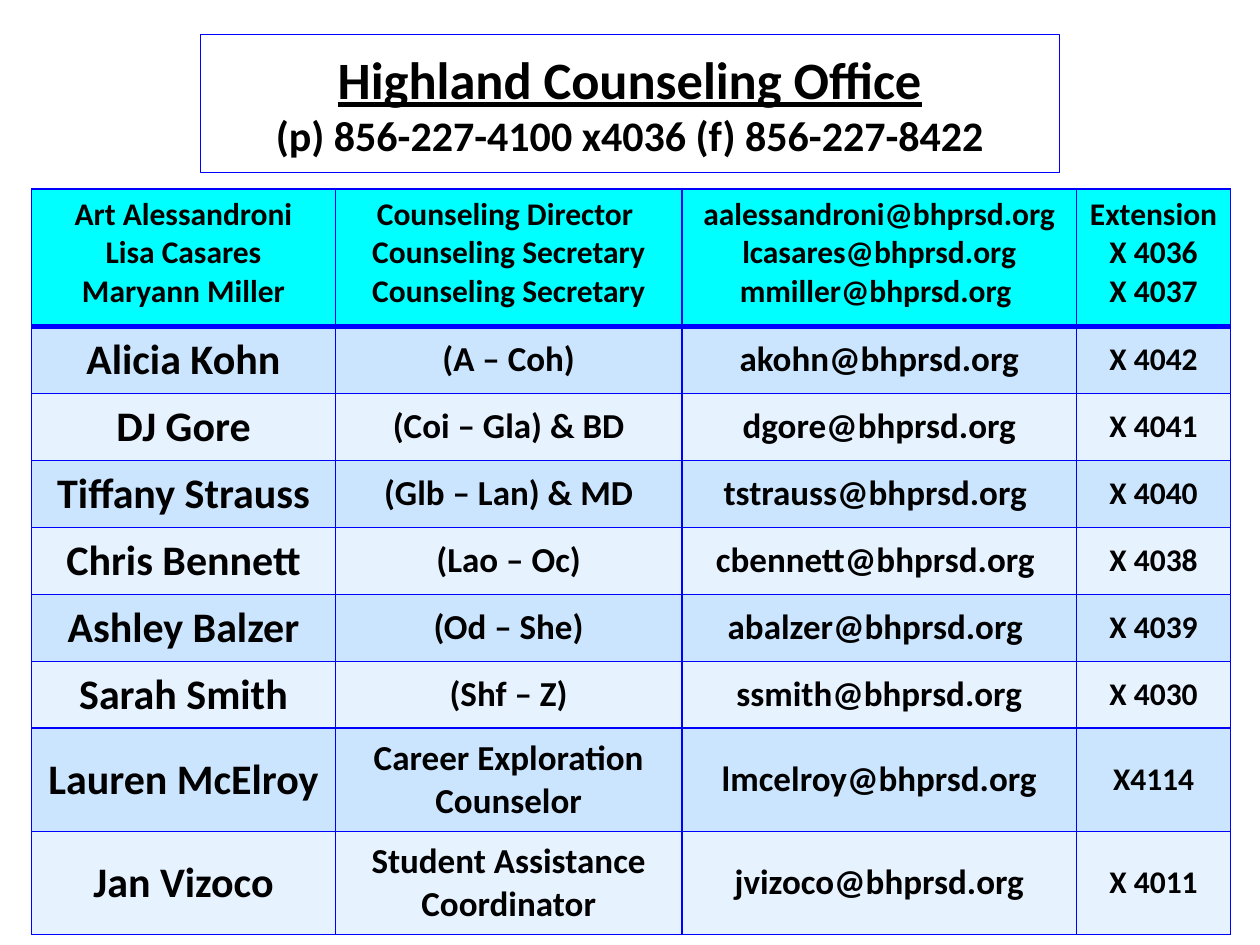
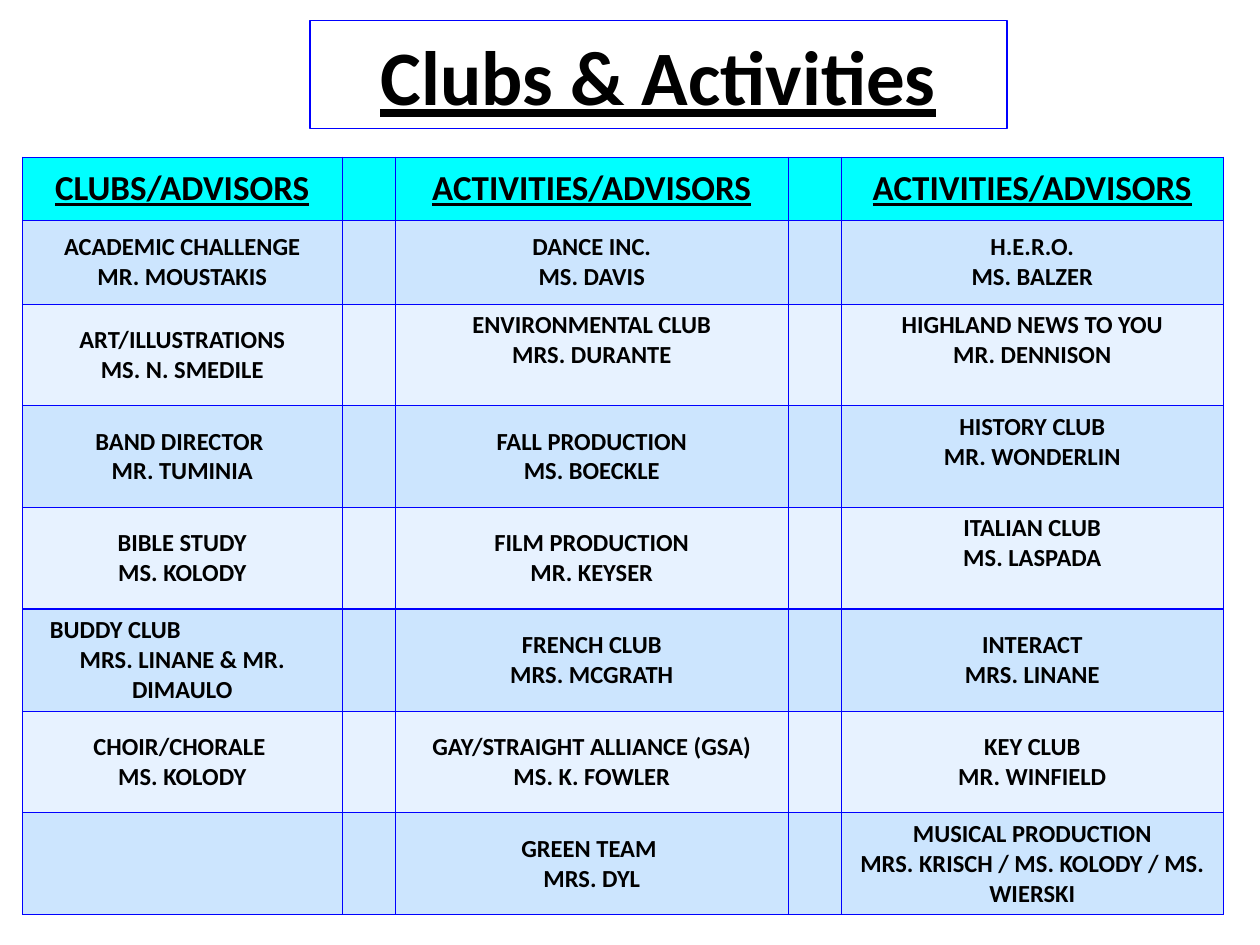
from lxml.etree import SubElement
from pptx import Presentation
from pptx.dml.color import RGBColor
from pptx.enum.shapes import MSO_SHAPE
from pptx.enum.text import MSO_ANCHOR, PP_ALIGN
from pptx.oxml.ns import qn
from pptx.util import Cm, Pt

FONT = "Calibri"
INK = "000000"
RULE = "0000FF"
HEADER = "00FFFF"
BANDS = ("CCE5FE", "E7F2FF")

STAFF_HEADER = [
    "Art Alessandroni\nLisa Casares\nMaryann Miller",
    "Counseling Director \nCounseling Secretary\nCounseling Secretary",
    "aalessandroni@bhprsd.org\nlcasares@bhprsd.org\nmmiller@bhprsd.org ",
    "Extension\nX 4036\nX 4037",
]
COUNSELORS = [
    ("Alicia Kohn", "(A – Coh)", "akohn@bhprsd.org", "X 4042"),
    ("DJ Gore", "(Coi – Gla) & BD", "dgore@bhprsd.org", "X 4041"),
    ("Tiffany Strauss", "(Glb – Lan) & MD", "tstrauss@bhprsd.org ", "X 4040"),
    ("Chris Bennett", "(Lao – Oc)", "cbennett@bhprsd.org ", "X 4038"),
    ("Ashley Balzer", "(Od – She)", "abalzer@bhprsd.org ", "X 4039"),
    ("Sarah Smith", "(Shf – Z)", "ssmith@bhprsd.org", "X 4030"),
    ("Lauren McElroy", "Career Exploration Counselor", "lmcelroy@bhprsd.org", "X4114"),
    ("Jan Vizoco", "Student Assistance Coordinator", "jvizoco@bhprsd.org", "X 4011"),
]
CLUB_HEADER = ["CLUBS/ADVISORS", "", "ACTIVITIES/ADVISORS", "", "ACTIVITIES/ADVISORS"]
CLUBS = [
    ("ACADEMIC CHALLENGE\nMR. MOUSTAKIS", "DANCE INC.\nMS. DAVIS", "H.E.R.O.\nMS. BALZER"),
    ("ART/ILLUSTRATIONS\nMS. N. SMEDILE", "ENVIRONMENTAL CLUB\nMRS. DURANTE",
     "HIGHLAND NEWS TO YOU\nMR. DENNISON"),
    ("BAND DIRECTOR \nMR. TUMINIA", "FALL PRODUCTION\nMS. BOECKLE",
     "HISTORY CLUB\nMR. WONDERLIN"),
    ("BIBLE STUDY\nMS. KOLODY", "FILM PRODUCTION\nMR. KEYSER", "ITALIAN CLUB\nMS. LASPADA"),
    ("BUDDY CLUB\nMRS. LINANE & MR. DIMAULO", "FRENCH CLUB\nMRS. MCGRATH",
     "INTERACT\nMRS. LINANE"),
    ("CHOIR/CHORALE \nMS. KOLODY", "GAY/STRAIGHT ALLIANCE (GSA)\nMS. K. FOWLER",
     "KEY CLUB\nMR. WINFIELD"),
    ("", "GREEN TEAM \nMRS. DYL",
     "MUSICAL PRODUCTION\nMRS. KRISCH / MS. KOLODY / MS. WIERSKI"),
]
RAISED_CLUB_CELLS = [(2, 2), (2, 4), (3, 4), (4, 4)]


def color(value):
    """Turn a hex string into a colour."""
    return RGBColor.from_string(value)


def style_paragraph(para, size, underline=False):
    """Centre a paragraph and give it the shared bold face."""
    para.alignment = PP_ALIGN.CENTER
    font = para.font
    font.name, font.size, font.bold, font.underline = FONT, Pt(size), True, underline
    font.color.rgb = color(INK)


def add_title(page, box, lines):
    """Add a framed title from (text, size, underline) lines."""
    shape = page.shapes.add_shape(MSO_SHAPE.RECTANGLE, *map(Cm, box))
    shape.shadow.inherit = False
    shape.fill.background()
    shape.line.color.rgb = color(RULE)
    shape.line.width = Pt(0.75)
    frame = shape.text_frame
    frame.word_wrap = True
    frame.vertical_anchor = MSO_ANCHOR.MIDDLE
    frame.text = "\n".join(text for text, _, _ in lines)
    for para, (_, size, underline) in zip(frame.paragraphs, lines):
        style_paragraph(para, size, underline)


def add_borders(cell, left, right, top, bottom):
    """Draw the four cell borders with the given point widths."""
    properties = cell._tc.get_or_add_tcPr()
    for side, width in zip("LRTB", (left, right, top, bottom)):
        line = SubElement(properties, qn(f"a:ln{side}"), w=str(Pt(width)))
        fill = SubElement(line, qn("a:solidFill"))
        SubElement(fill, qn("a:srgbClr"), val=RULE)


def add_grid(page, corner, widths, heights, rows, header_size, body_sizes,
             underline=False, rule=1, header_rule=1):
    """Add a table with a bright header and alternating body bands."""
    frame = page.shapes.add_table(len(rows), len(widths), *map(
        Cm, (*corner, sum(widths), sum(heights))))
    table = frame.table
    table.first_row = table.horz_banding = False
    for column, width in zip(table.columns, widths):
        column.width = Cm(width)
    for index, (row, height, texts) in enumerate(zip(table.rows, heights, rows)):
        row.height = Cm(height)
        is_header = index == 0
        for cell, text, body_size in zip(row.cells, texts, body_sizes):
            add_borders(cell, rule, rule, header_rule if index == 1 else rule,
                        header_rule if is_header else rule)
            cell.fill.solid()
            cell.fill.fore_color.rgb = color(HEADER if is_header else BANDS[(index - 1) % 2])
            cell.vertical_anchor = MSO_ANCHOR.MIDDLE
            cell.text = text
            for para in cell.text_frame.paragraphs:
                style_paragraph(para, header_size if is_header else body_size,
                                underline and is_header)
    return table


def build_counseling(page):
    """Fill the counseling office page."""
    table = add_grid(page, (0.64, 3.81), [6.12, 6.99, 7.95, 3.11],
                     [2.77] + [1.35] * 6 + [2.08] * 2, [STAFF_HEADER] + COUNSELORS,
                     18, [24, 20, 20, 18], header_rule=3)
    for cell in table.rows[0].cells:
        cell.vertical_anchor = MSO_ANCHOR.TOP
    add_title(page, (4.04, 0.69, 17.32, 2.79), [
        ("Highland Counseling Office", 30, True),
        ("(p) 856-227-4100 x4036 (f) 856-227-8422", 24, False)])


def build_clubs(page):
    """Fill the clubs and activities page."""
    rows = [CLUB_HEADER] + [(club, "", middle, "", right) for club, middle, right in CLUBS]
    table = add_grid(page, (0.45, 3.17), [6.45, 1.07, 7.92, 1.07, 7.7],
                     [1.27, 1.69] + [2.05] * 6, rows, 20, [14] * 5,
                     underline=True, rule=0.75, header_rule=0.75)
    for row, column in RAISED_CLUB_CELLS:
        table.cell(row, column).vertical_anchor = MSO_ANCHOR.TOP
    buddy_club = table.cell(5, 0).text_frame.paragraphs[0]
    buddy_club.alignment = PP_ALIGN.LEFT
    buddy_club._p.get_or_add_pPr().set("marL", str(Cm(0.3)))
    add_title(page, (6.25, 0.41, 14.05, 2.18), [("Clubs & Activities", 44, True)])


def main():
    """Build and save the deck."""
    deck = Presentation()
    deck.slide_width, deck.slide_height = Cm(25.4), Cm(19.05)
    for build in (build_counseling, build_clubs):
        build(deck.slides.add_slide(deck.slide_layouts[6]))
    deck.save("out.pptx")


if __name__ == "__main__":
    main()
